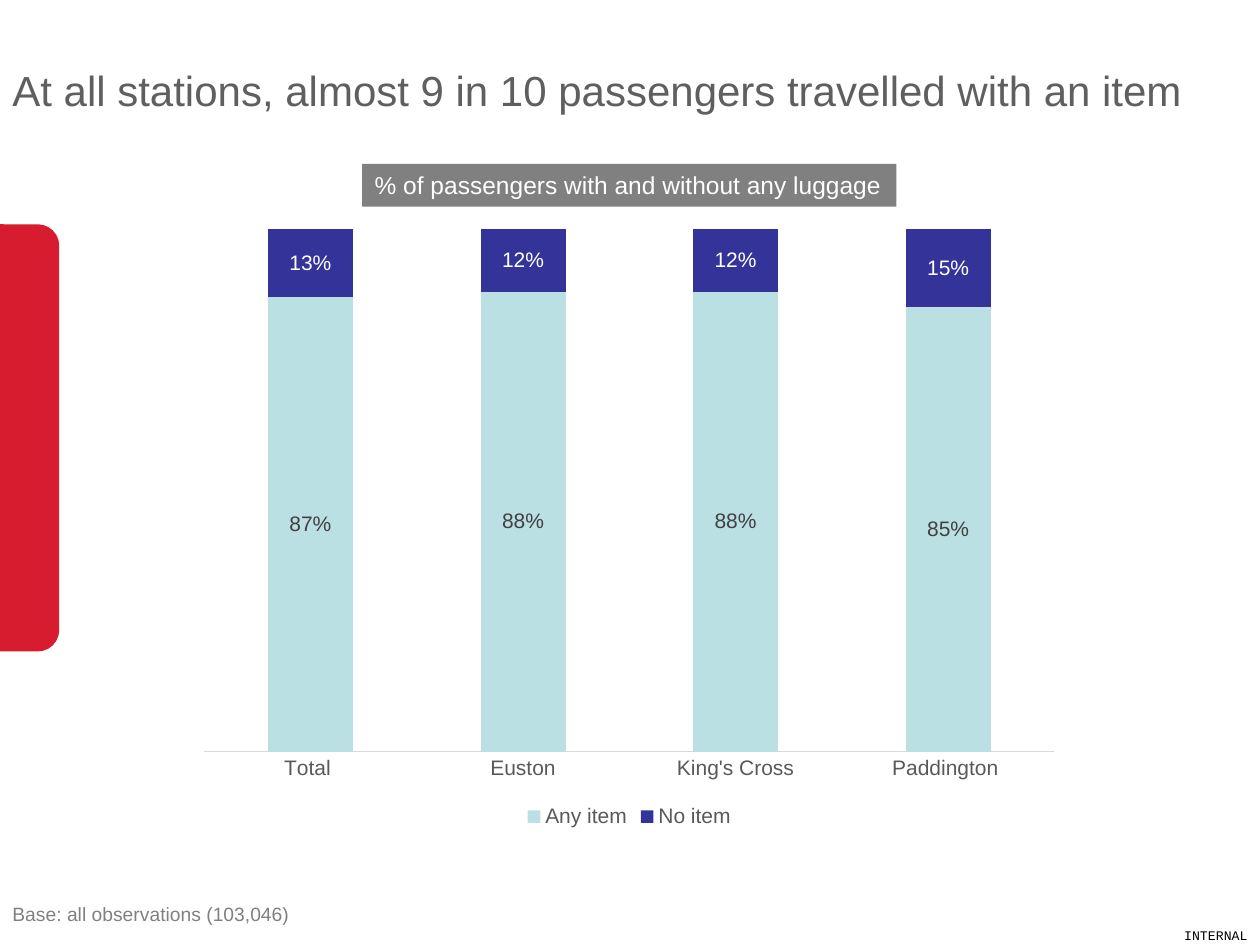
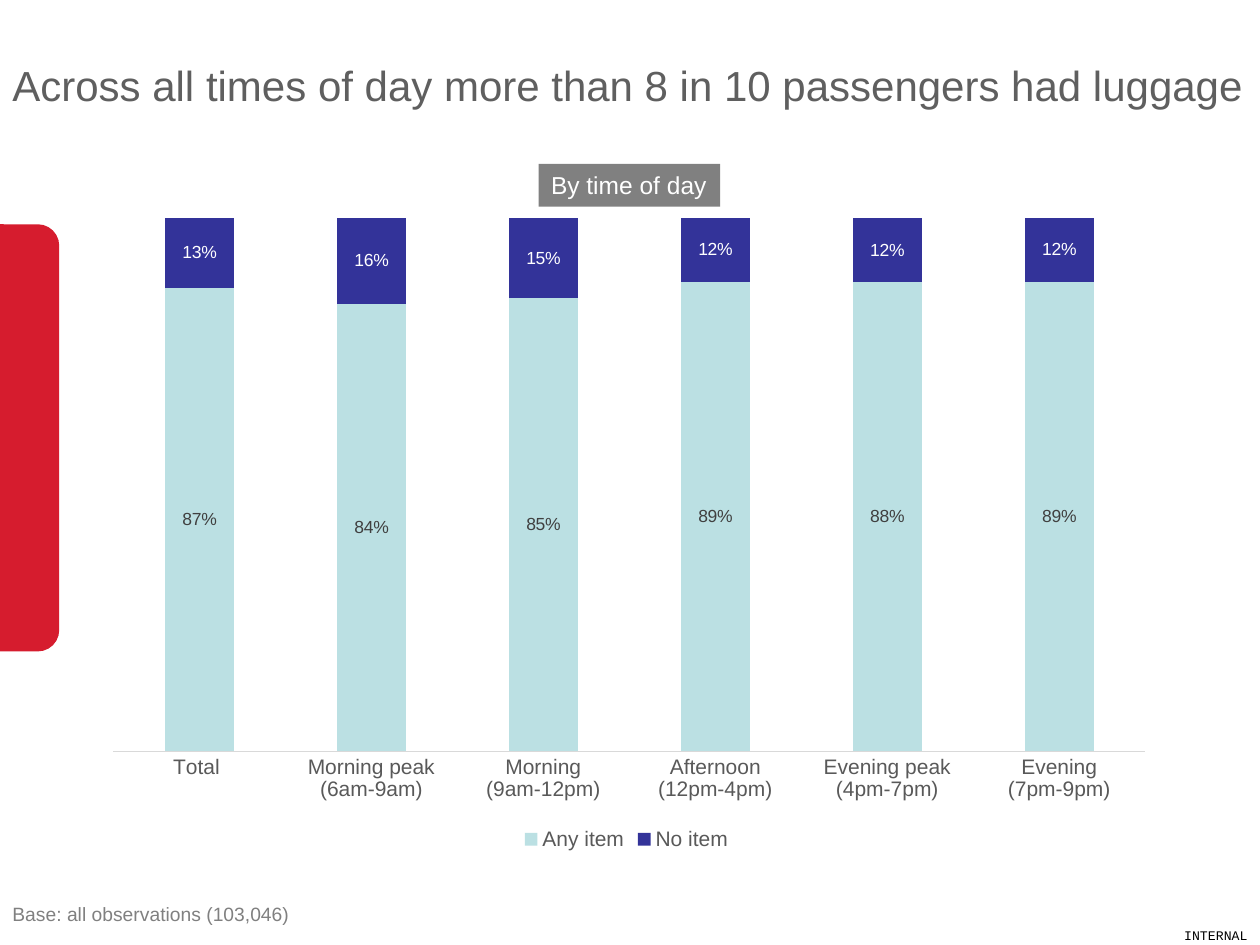
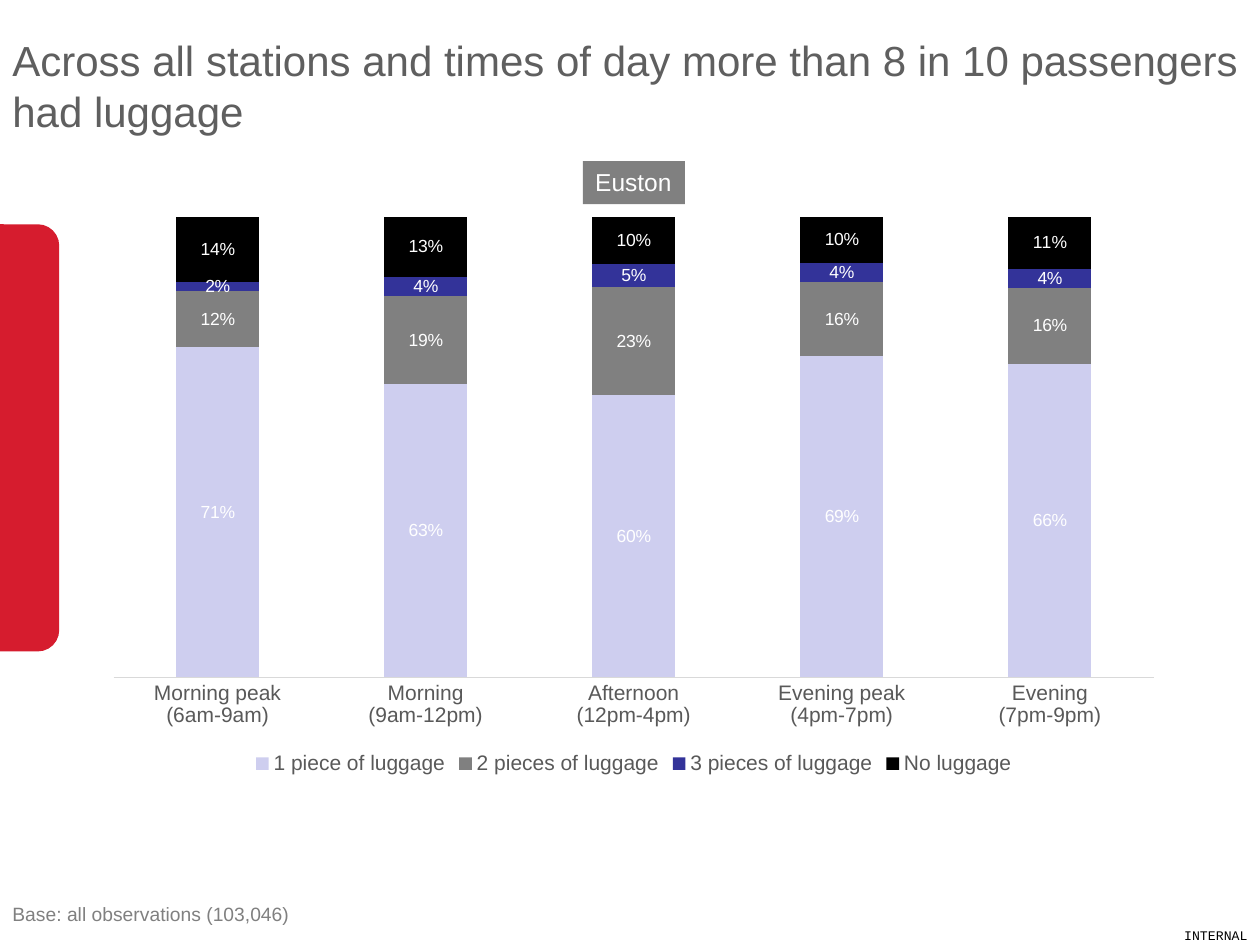
"""Build three slides of stacked luggage charts by station and time of day."""
from pptx import Presentation
from pptx.chart.data import CategoryChartData
from pptx.dml.color import RGBColor
from pptx.enum.chart import XL_CHART_TYPE as CT, XL_LABEL_POSITION as LP
from pptx.enum.chart import XL_LEGEND_POSITION as LEG, XL_TICK_MARK as TM
from pptx.enum.shapes import MSO_SHAPE as SHAPE
from pptx.enum.text import MSO_ANCHOR as ANCHOR, PP_ALIGN as ALIGN
from pptx.util import Inches, Pt

W, H = 10, 7.5
C = {
    "red": "D61C2E", "title": "5F5F5F", "grey": "808080", "white": "FFFFFF",
    "black": "000000", "axis": "595959", "line": "D9D9D9", "dark": "404040",
    "aqua": "BBE0E3", "navy": "333399", "lilac": "CECEEF",
}
FONT = "Arial"
TIMES = ["Morning peak\n(6am-9am)", "Morning\n(9am-12pm)", "Afternoon\n(12pm-4pm)",
         "Evening peak\n(4pm-7pm)", "Evening\n(7pm-9pm)"]

SLIDES = [
    dict(title="At all stations, almost 9 in 10 passengers travelled with an item",
         title_top=0.21, tag="% of passengers with and without any luggage",
         tag_top=1.3, tag_width=4.24, chart=(1.48, 1.72, 7.03, 4.89), label_size=12,
         cats=["Total ", "Euston", "King's Cross", "Paddington "],
         series=[("Any item", "aqua", "dark", [0.87, 0.88, 0.88, 0.85]),
                 ("No item", "navy", "white", [0.13, 0.12, 0.12, 0.15])]),
    dict(title="Across all times of day more than 8 in 10 passengers had luggage",
         title_top=0.17, tag="By time of day",
         tag_top=1.3, tag_width=1.44, chart=(0.73, 1.63, 8.53, 5.16), label_size=10,
         cats=["Total "] + TIMES,
         series=[("Any item", "aqua", "dark", [0.87, 0.84, 0.85, 0.89, 0.88, 0.89]),
                 ("No item ", "navy", "white", [0.13, 0.16, 0.15, 0.12, 0.12, 0.12])]),
    dict(title="Across all stations and times of day more than 8 in 10 passengers had luggage",
         title_top=0.17, tag="Euston",
         tag_top=1.28, tag_width=0.81, chart=(0.73, 1.63, 8.6, 4.56), label_size=10,
         cats=TIMES,
         series=[("1 piece of luggage", "lilac", "white", [0.71, 0.63, 0.6, 0.69, 0.66]),
                 ("2 pieces of luggage", "grey", "white", [0.12, 0.19, 0.23, 0.16, 0.16]),
                 ("3 pieces of luggage", "navy", "white", [0.02, 0.04, 0.05, 0.04, 0.04]),
                 ("No luggage", "black", "white", [0.14, 0.13, 0.1, 0.1, 0.11])]),
]


def set_font(font, size, color, name=FONT):
    font.size, font.name = Pt(size), name
    font.color.rgb = RGBColor.from_string(C[color])


def add_text(s, text, box, size, color, font=FONT, fill=None, wrap=True,
             align=ALIGN.LEFT, anchor=ANCHOR.TOP):
    box = [Inches(v) for v in box]
    if fill:
        sp = s.shapes.add_shape(SHAPE.RECTANGLE, *box)
        sp.shadow.inherit = False
        sp.fill.solid()
        sp.fill.fore_color.rgb = RGBColor.from_string(C[fill])
        sp.line.fill.background()
    else:
        sp = s.shapes.add_textbox(*box)
    tf = sp.text_frame
    tf.word_wrap, tf.vertical_anchor = wrap, anchor
    p = tf.paragraphs[0]
    p.alignment = align
    r = p.add_run()
    r.text = text
    set_font(r.font, size, color, font)


prs = Presentation()
prs.slide_width, prs.slide_height = Inches(W), Inches(H)

for d in SLIDES:
    s = prs.slides.add_slide(prs.slide_layouts[6])

    band = s.shapes.add_shape(SHAPE.ROUNDED_RECTANGLE, Inches(-0.55), Inches(1.78),
                              Inches(1.02), Inches(3.39))
    band.shadow.inherit = False
    band.fill.solid()
    band.fill.fore_color.rgb = RGBColor.from_string(C["red"])
    band.line.fill.background()
    add_text(s, "INTERNAL", (0, H - 0.19, W, 0.23), 7.5, "black",
             font="Courier New", align=ALIGN.RIGHT)

    data = CategoryChartData(number_format="0%")
    data.categories = d["cats"]
    for name, _, _, vals in d["series"]:
        data.add_series(name, vals)
    chart = s.shapes.add_chart(CT.COLUMN_STACKED_100,
                               *[Inches(v) for v in d["chart"]], data).chart
    set_font(chart.font, 10, "black")
    chart.has_title = False
    chart.has_legend = True
    chart.legend.position = LEG.BOTTOM
    chart.legend.include_in_layout = False
    set_font(chart.legend.font, 12, "axis")

    val = chart.value_axis
    val.visible = val.has_major_gridlines = False
    val.minimum_scale = 0
    cat = chart.category_axis
    cat.major_tick_mark = cat.minor_tick_mark = TM.NONE
    set_font(cat.tick_labels.font, 12, "axis")
    cat.format.line.color.rgb = RGBColor.from_string(C["line"])
    cat.format.line.width = Pt(0.75)

    plot = chart.plots[0]
    plot.gap_width, plot.overlap, plot.vary_by_categories = 150, 100, False
    for ser, (_, fill, label_color, _) in zip(plot.series, d["series"]):
        ser.format.fill.solid()
        ser.format.fill.fore_color.rgb = RGBColor.from_string(C[fill])
        labels = ser.data_labels
        labels.show_value = True
        labels.number_format, labels.number_format_is_linked = "0%", False
        labels.position = LP.CENTER
        set_font(labels.font, d["label_size"], label_color)

    add_text(s, "Base: all observations (103,046)", (0, H - 0.39, 2.41, 0.29), 11, "grey",
             wrap=False)
    add_text(s, d["title"], (0, d["title_top"], W, 1.01), 24, "title", anchor=ANCHOR.MIDDLE)
    left, _, width, _ = d["chart"]
    add_text(s, d["tag"], (left + (width - d["tag_width"]) / 2, d["tag_top"],
                           d["tag_width"], 0.34), 14, "white", fill="grey", wrap=False)

prs.save("out.pptx")
